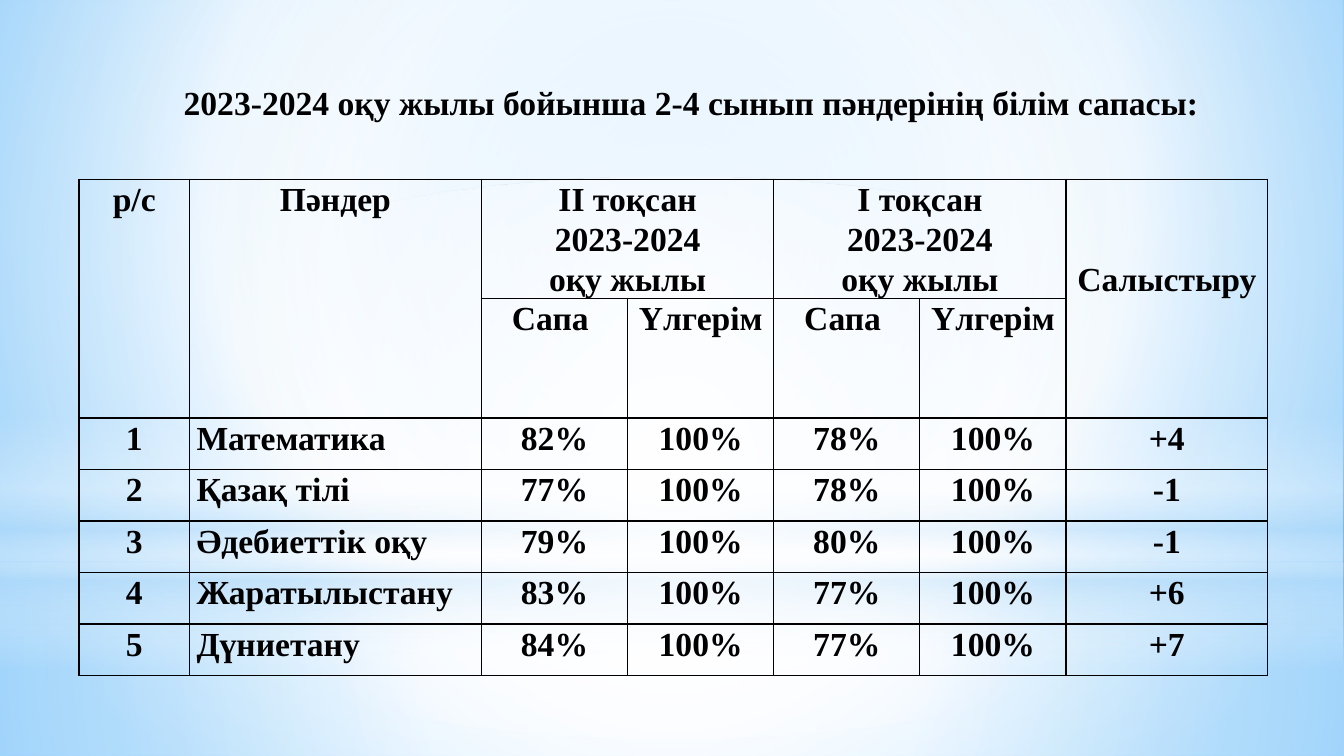
from dataclasses import dataclass
from typing import Optional

from lxml.etree import SubElement, fromstring
from pptx import Presentation
from pptx.dml.color import RGBColor
from pptx.enum.shapes import MSO_SHAPE
from pptx.enum.text import MSO_ANCHOR, MSO_AUTO_SIZE, PP_ALIGN
from pptx.oxml.ns import nsdecls, qn
from pptx.util import Pt

BLACK = RGBColor(0x00, 0x00, 0x00)
WHITE = RGBColor(0xFF, 0xFF, 0xFF)
PALE_BLUE = RGBColor(0xB4, 0xDC, 0xFA)
SKY_BLUE = RGBColor(0x9E, 0xD5, 0xFF)
BRIGHT_BLUE = RGBColor(0x5B, 0xB9, 0xFF)

FONT_NAME = "Times New Roman"
FONT_SIZE = Pt(24)
SLIDE_WIDTH = Pt(960)
SLIDE_HEIGHT = Pt(540)

TITLE = "2023-2024 оқу жылы бойынша 2-4 сынып пәндерінің білім сапасы:"
COLUMN_WIDTHS = [79, 208.5] + [104.4] * 4 + [144]
ROW_HEIGHTS = [85, 85] + [36.8] * 5


@dataclass(frozen=True)
class Stop:
    position: int
    color: RGBColor
    opacity: int = 100


@dataclass(frozen=True)
class Glow:
    preset: MSO_SHAPE
    top: float
    height: float
    stops: tuple[Stop, ...]
    center: Optional[tuple[int, int, int, int]] = (50, 50, 50, 50)


@dataclass(frozen=True)
class Heading:
    row: int
    column: int
    text: str
    row_span: int = 1
    column_span: int = 1
    top_margin: float = 0


@dataclass(frozen=True)
class Subject:
    name: str
    second_quarter: int
    first_quarter: int
    change: str


GLOWS = [
    Glow(MSO_SHAPE.RECTANGLE, 402, 138,
         (Stop(0, WHITE, 91), Stop(37, WHITE, 76), Stop(100, PALE_BLUE, 79))),
    Glow(MSO_SHAPE.RECTANGLE, 0, 402,
         (Stop(0, WHITE, 89), Stop(48, WHITE, 62), Stop(100, PALE_BLUE, 79))),
    Glow(MSO_SHAPE.RECTANGLE, 297, 180,
         (Stop(0, WHITE, 0), Stop(29, WHITE, 30), Stop(45, PALE_BLUE, 40),
          Stop(55, WHITE, 26), Stop(65, PALE_BLUE, 60), Stop(100, WHITE, 0)), None),
    Glow(MSO_SHAPE.OVAL, 126, 402, (Stop(0, WHITE), Stop(56, WHITE, 0))),
]

HEADINGS = [
    Heading(0, 0, "р/с", row_span=2),
    Heading(0, 1, "Пәндер", row_span=2),
    Heading(0, 2, "ІІ тоқсан\n2023-2024\nоқу жылы", column_span=2),
    Heading(0, 4, "І тоқсан\n2023-2024\nоқу жылы", column_span=2),
    Heading(0, 6, "Салыстыру", row_span=2, top_margin=57),
    Heading(1, 2, "Сапа "),
    Heading(1, 3, "Үлгерім"),
    Heading(1, 4, "Сапа "),
    Heading(1, 5, "Үлгерім"),
]

SUBJECTS = [
    Subject("Математика", 82, 78, "+4"),
    Subject("Қазақ тілі", 77, 78, "-1"),
    Subject("Әдебиеттік оқу", 79, 80, "-1"),
    Subject("Жаратылыстану", 83, 77, "+6"),
    Subject("Дүниетану", 84, 77, "+7"),
]


def apply_gradient(owner, stops, center) -> None:
    owner.fill.gradient()


def set_gradient(element, stops: tuple[Stop, ...],
                 center: Optional[tuple[int, int, int, int]]) -> None:
    gradient = element.find(".//" + qn("a:gradFill"))
    for child in list(gradient):
        gradient.remove(child)
    stop_list = SubElement(gradient, qn("a:gsLst"))
    for stop in stops:
        entry = SubElement(stop_list, qn("a:gs"), pos=str(stop.position * 1000))
        color = SubElement(entry, qn("a:srgbClr"), val=str(stop.color))
        SubElement(color, qn("a:alpha"), val=str(stop.opacity * 1000))
    if center is None:
        SubElement(gradient, qn("a:lin"), ang="5400000", scaled="0")
    else:
        circle = SubElement(gradient, qn("a:path"), path="circle")
        edges = {side: str(share * 1000) for side, share in zip("ltrb", center)}
        SubElement(circle, qn("a:fillToRect"), **edges)


def format_paragraph(paragraph, alignment: PP_ALIGN, line_spacing: float) -> None:
    paragraph.alignment = alignment
    paragraph.line_spacing = line_spacing
    paragraph.font.name = FONT_NAME
    paragraph.font.size = FONT_SIZE
    paragraph.font.bold = True
    paragraph.font.color.rgb = BLACK


def draw_background(slide) -> None:
    slide.background.fill.gradient()
    set_gradient(slide.element,
                 (Stop(0, SKY_BLUE), Stop(60, WHITE), Stop(100, BRIGHT_BLUE)),
                 (20, 10, 20, 60))
    for glow in GLOWS:
        shape = slide.shapes.add_shape(
            glow.preset, 0, Pt(glow.top), SLIDE_WIDTH, Pt(glow.height))
        shape.shadow.inherit = False
        shape.line.fill.background()
        shape.fill.gradient()
        set_gradient(shape.element, glow.stops, glow.center)


def draw_title(slide) -> None:
    title = slide.shapes.title
    slide.shapes.element.append(title.element)
    title.left, title.top, title.width, title.height = Pt(24), Pt(50.5), Pt(914), Pt(34)
    frame = title.text_frame
    frame.text = TITLE
    frame.word_wrap = True
    frame.auto_size = MSO_AUTO_SIZE.NONE
    frame.vertical_anchor = MSO_ANCHOR.TOP
    paragraph = frame.paragraphs[0]
    format_paragraph(paragraph, PP_ALIGN.CENTER, 1.15)
    properties = paragraph._p.get_or_add_pPr()
    properties.set("marL", str(Pt(25)))
    properties.set("indent", "0")


def format_cell(cell) -> None:
    cell.margin_left = cell.margin_right = Pt(5)
    cell.margin_top = cell.margin_bottom = 0
    cell.fill.background()
    properties = cell._tc.get_or_add_tcPr()
    for position, side in enumerate("LRTB"):
        properties.insert(position, fromstring(
            f'<a:ln{side} {nsdecls("a")} w="{Pt(1)}"><a:solidFill>'
            f'<a:srgbClr val="{BLACK}"/></a:solidFill></a:ln{side}>'))


def write_cell(cell, text: str, alignment: PP_ALIGN = PP_ALIGN.CENTER) -> None:
    cell.text_frame.text = text
    for paragraph in cell.text_frame.paragraphs:
        format_paragraph(paragraph, alignment, 1.07)


def draw_table(slide) -> None:
    table = slide.shapes.add_table(
        len(ROW_HEIGHTS), len(COLUMN_WIDTHS), Pt(56.4), Pt(128),
        Pt(sum(COLUMN_WIDTHS)), Pt(sum(ROW_HEIGHTS))).table
    table.first_row = table.horz_banding = False
    for column, width in zip(table.columns, COLUMN_WIDTHS):
        column.width = Pt(width)
    for row, height in zip(table.rows, ROW_HEIGHTS):
        row.height = Pt(height)
        for cell in row.cells:
            format_cell(cell)
    for heading in HEADINGS:
        cell = table.cell(heading.row, heading.column)
        if heading.row_span * heading.column_span > 1:
            cell.merge(table.cell(heading.row + heading.row_span - 1,
                                  heading.column + heading.column_span - 1))
        cell.margin_top = Pt(heading.top_margin)
        write_cell(cell, heading.text)
    for number, subject in enumerate(SUBJECTS, start=1):
        values = [str(number), subject.name, f"{subject.second_quarter}%", "100%",
                  f"{subject.first_quarter}%", "100%", subject.change]
        for column, text in enumerate(values):
            alignment = PP_ALIGN.JUSTIFY if column == 1 else PP_ALIGN.CENTER
            write_cell(table.cell(number + 1, column), text, alignment)


def main() -> None:
    presentation = Presentation()
    presentation.slide_width, presentation.slide_height = SLIDE_WIDTH, SLIDE_HEIGHT
    slide = presentation.slides.add_slide(presentation.slide_layouts[5])
    draw_background(slide)
    draw_title(slide)
    draw_table(slide)
    presentation.save("out.pptx")


if __name__ == "__main__":
    main()
